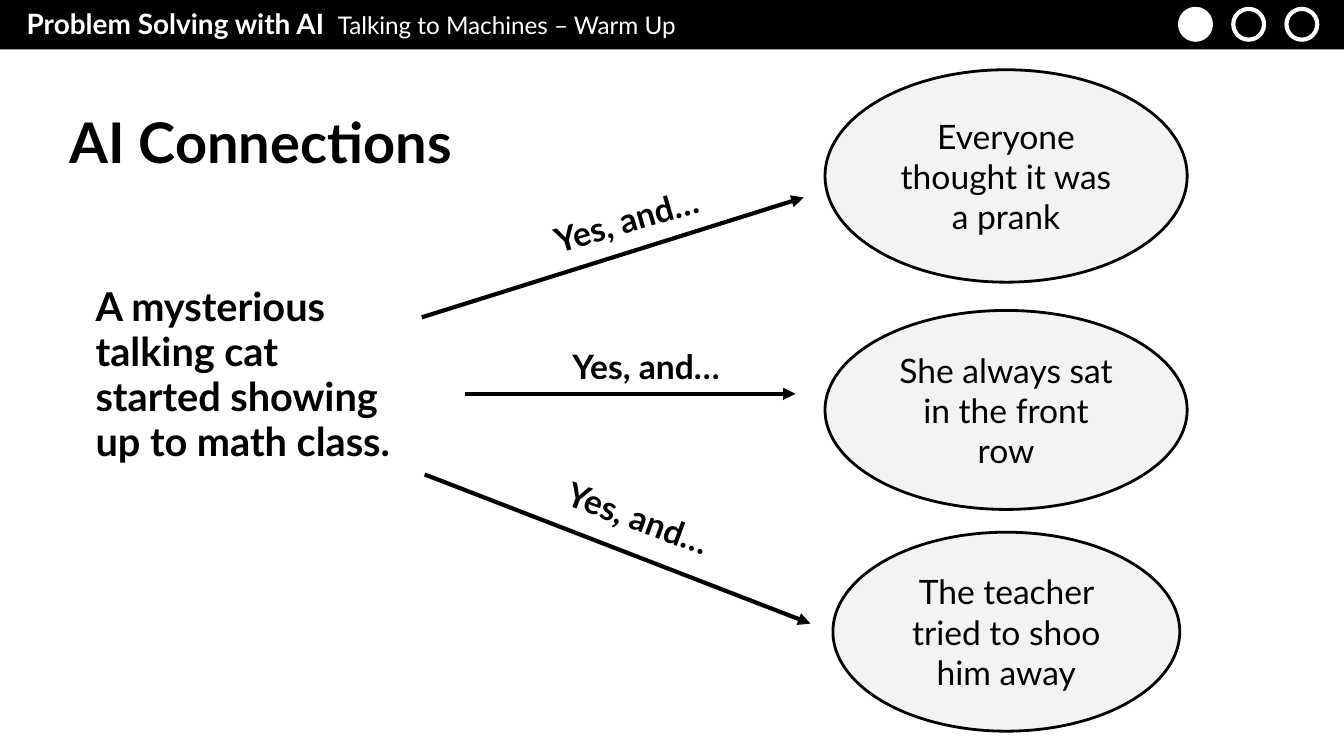
from lxml.etree import SubElement
from pptx import Presentation
from pptx.dml.color import RGBColor
from pptx.enum.shapes import MSO_CONNECTOR as Connector, MSO_SHAPE as Shape
from pptx.enum.text import MSO_ANCHOR as Anchor, MSO_AUTO_SIZE as AutoSize, PP_ALIGN as Align
from pptx.oxml.ns import qn
from pptx.util import Pt

BLACK, WHITE, GREY = "000000", "FFFFFF", "F3F3F3"


def color(value):
    return RGBColor.from_string(value)


class SlideBuilder:
    font_name = "Lato"
    inset = 7.2

    def __init__(self, slide):
        self.slide = slide

    def place(self, shape, left, top, width, height):
        shape.left, shape.top = Pt(left), Pt(top)
        shape.width, shape.height = Pt(width), Pt(height)

    def add_runs(self, shape, runs, align=Align.LEFT, anchor=Anchor.MIDDLE):
        frame = shape.text_frame
        frame.word_wrap = True
        frame.auto_size = AutoSize.NONE
        frame.vertical_anchor = anchor
        frame.margin_left = frame.margin_right = Pt(self.inset)
        frame.margin_top = frame.margin_bottom = Pt(self.inset)
        paragraph = frame.paragraphs[0]
        paragraph.alignment = align
        paragraph.space_before = Pt(0)
        for text, size, bold, text_color in runs:
            run = paragraph.add_run()
            run.text = text
            run.font.name = self.font_name
            run.font.size = Pt(size)
            run.font.bold = bold
            run.font.color.rgb = color(text_color)
        return paragraph

    def title(self, box, text):
        shape = self.slide.shapes.title
        self.place(shape, *box)
        self.add_runs(shape, [(text, 30, True, BLACK)])

    def body(self, box, text):
        shape = self.slide.placeholders[1]
        self.place(shape, *box)
        paragraph = self.add_runs(shape, [(text, 21.3, True, BLACK)], anchor=Anchor.TOP)
        paragraph.line_spacing = 0.95
        paragraph.space_after = Pt(16)
        properties = paragraph._p.get_or_add_pPr()
        properties.set("marL", "0")
        properties.set("indent", "0")
        SubElement(properties, qn("a:buNone"))

    def shape(self, kind, box, fill=None, line=None, line_width=1.5):
        shape = self.slide.shapes.add_shape(kind, *map(Pt, box))
        shape.shadow.inherit = False
        if fill:
            shape.fill.solid()
            shape.fill.fore_color.rgb = color(fill)
        else:
            shape.fill.background()
        if line:
            shape.line.color.rgb = color(line)
            shape.line.width = Pt(line_width)
        else:
            shape.line.fill.background()
        return shape

    def text(self, box, runs, rotation=0):
        shape = self.slide.shapes.add_textbox(*map(Pt, box))
        shape.rotation = rotation
        return self.add_runs(shape, runs)

    def header(self, subject, lesson, tab):
        self.shape(Shape.RECTANGLE, (-0.5, -0.5, 721, 27), BLACK)
        paragraph = self.text((7.2, 0, 425, 25.5), [
            (subject, 15, True, WHITE),
            ("\t", 14, False, WHITE),
            (lesson, 13, False, WHITE),
        ])
        tabs = SubElement(paragraph._p.get_or_add_pPr(), qn("a:tabLst"))
        SubElement(tabs, qn("a:tab"), pos=str(int(Pt(tab))), algn="l")

    def progress(self, current, total):
        for step in range(total):
            fill = WHITE if step == current else None
            self.shape(Shape.OVAL, (632.2 + 28.5 * step, 4.8, 16.5, 16.5), fill, WHITE, 2.25)

    def bubble(self, box, text):
        shape = self.shape(Shape.OVAL, box, GREY, BLACK)
        self.add_runs(shape, [(text, 18, False, BLACK)], Align.CENTER)

    def arrow(self, start, end):
        connector = self.slide.shapes.add_connector(Connector.STRAIGHT, *map(Pt, start + end))
        connector.line.color.rgb = color(BLACK)
        connector.line.width = Pt(2.25)
        properties = connector._element.spPr
        SubElement(properties.get_or_add_ln(), qn("a:tailEnd"), type="triangle")
        SubElement(properties, qn("a:effectLst"))


def main():
    presentation = Presentation()
    presentation.slide_width, presentation.slide_height = Pt(720), Pt(405)
    slide = presentation.slides.add_slide(presentation.slide_layouts[1])
    builder = SlideBuilder(slide)

    builder.header("Problem Solving with AI", "Talking to Machines – Warm Up", 166.7)
    builder.progress(0, 3)
    builder.title((30.2, 50.4, 244.8, 50.4), "AI Connections")
    builder.body((44, 145.4, 177, 139.7),
                 "A mysterious talking cat started showing up to math class.")

    ideas = [
        ("Everyone thought it was a prank", (442, 37.4, 194, 113.8),
         (226, 170), (430.6, 105.8), (288.7, 95.8), 343.9),
        ("She always sat in the front row", (442, 166.3, 194, 106.6),
         (249, 211), (426.2, 211), (299.5, 175), 0),
        ("The teacher tried to shoo him away", (446.2, 285.1, 185.8, 106.6),
         (227.5, 254.2), (434.2, 334.1), (295.2, 257), 20.2),
    ]
    for idea, bubble, start, end, label, rotation in ideas:
        builder.bubble(bubble, idea)
        builder.arrow(start, end)
        builder.text(label + (98.6, 42.5), [("Yes, and…", 18, True, BLACK)], rotation)

    presentation.save("out.pptx")


if __name__ == "__main__":
    main()
